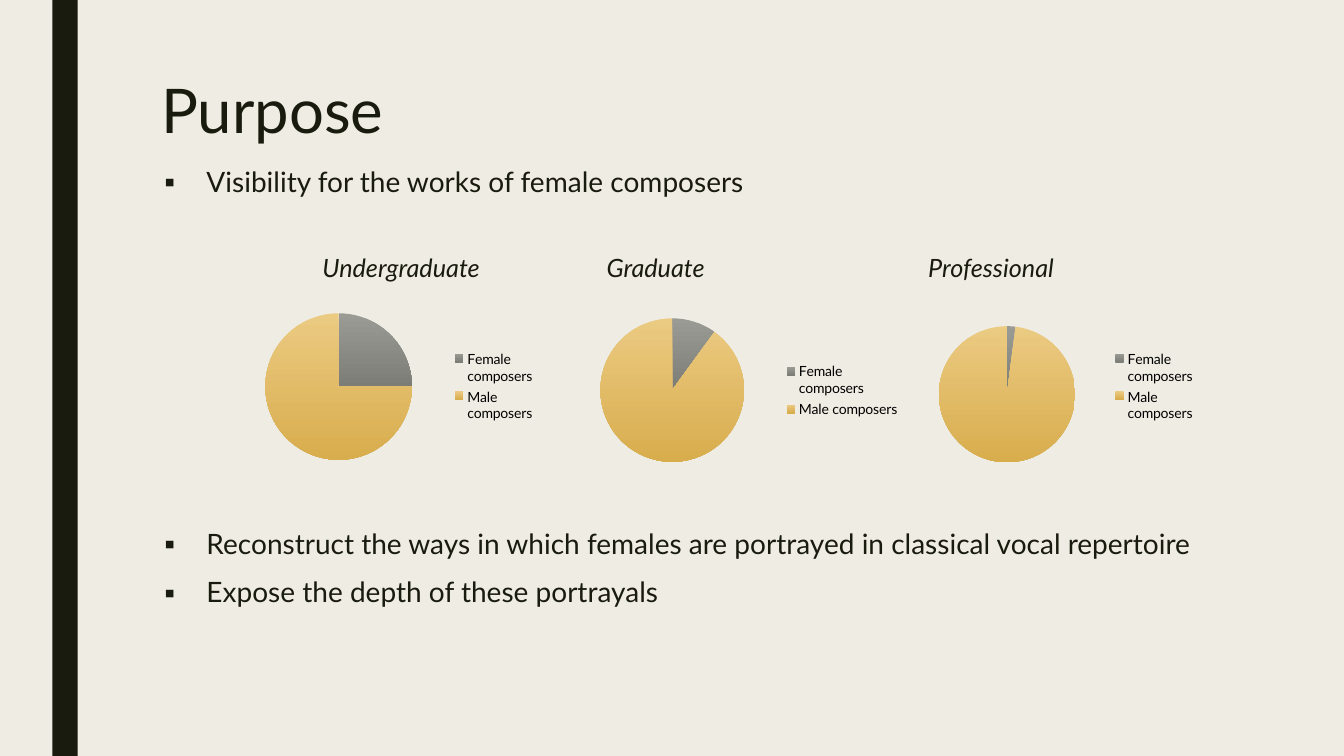
from dataclasses import dataclass

from lxml import etree
from pptx import Presentation
from pptx.chart.data import CategoryChartData
from pptx.dml.color import RGBColor
from pptx.enum.chart import XL_CHART_TYPE, XL_LEGEND_POSITION
from pptx.enum.shapes import MSO_SHAPE
from pptx.oxml import parse_xml
from pptx.oxml.ns import nsdecls, qn
from pptx.util import Inches, Pt

PIE = XL_CHART_TYPE.PIE
RIGHT = XL_LEGEND_POSITION.RIGHT
RECT = MSO_SHAPE.RECTANGLE
COLS, ROWS = 160, 90


@dataclass(frozen=True)
class Theme:
    font: str = "Lato"
    paper: str = "EFEDE3"
    ink: str = "191B0E"
    label: str = "000000"
    slices: tuple = (("9A9B95", "7C7D76"), ("EBCA82", "D8AD4D"))
    title: int = 44
    body: int = 20
    head: int = 18
    legend: int = 10


def color(code):
    return RGBColor.from_string(code)


class Deck:
    def __init__(self, theme):
        self.theme = theme
        self.show = Presentation()
        self.show.slide_width = Inches(13.33)
        self.show.slide_height = Inches(7.5)
        self.slide = self.show.slides.add_slide(self.show.slide_layouts[6])
        back = self.slide.background.fill
        back.solid()
        back.fore_color.rgb = color(theme.paper)

    def place(self, left, top, width, height):
        col = self.show.slide_width / COLS
        row = self.show.slide_height / ROWS
        return [round(n) for n in (left * col, top * row, width * col, height * row)]

    def bar(self, *area):
        shape = self.slide.shapes.add_shape(RECT, *self.place(*area))
        shape.shadow.inherit = False
        shape.fill.solid()
        shape.fill.fore_color.rgb = color(self.theme.ink)
        shape.line.fill.background()

    def text(self, area, lines, size, pitch=0.94, slant=False, dots=False):
        frame = self.slide.shapes.add_textbox(*self.place(*area)).text_frame
        frame.word_wrap = True
        for i, line in enumerate(lines):
            para = frame.add_paragraph() if i else frame.paragraphs[0]
            para.line_spacing = pitch
            para.space_before = Pt(10 if i else 0)
            para.space_after = Pt(2)
            run = para.add_run()
            run.text = line
            run.font.name = self.theme.font
            run.font.size = Pt(size)
            run.font.italic = slant
            run.font.color.rgb = color(self.theme.ink)
            if dots:
                self.dot(para)

    def dot(self, para):
        props = para._p.get_or_add_pPr()
        props.set("marL", str(Inches(0.42)))
        props.set("indent", str(-Inches(0.42)))
        etree.SubElement(props, qn("a:buFont")).set("typeface", self.theme.font)
        etree.SubElement(props, qn("a:buChar")).set("char", "▪")

    def pie(self, area, share, plot=None):
        data = CategoryChartData()
        data.categories = ["Female composers", "Male composers"]
        data.add_series("Series 1", [share, 100 - share])
        chart = self.slide.shapes.add_chart(PIE, *self.place(*area), data).chart
        chart.has_title = False
        chart.font.name = self.theme.font
        chart.font.size = Pt(self.theme.legend)
        chart.font.color.rgb = color(self.theme.label)
        chart.has_legend = True
        chart.legend.position = RIGHT
        chart.legend.include_in_layout = False
        chart.plots[0].vary_by_categories = True
        points = chart.plots[0].series[0].points
        for i, tones in enumerate(self.theme.slices):
            look = points[i].format
            look.fill.gradient()
            look.fill.gradient_angle = 270
            for stop, tone in zip(look.fill.gradient_stops, tones):
                stop.color.rgb = color(tone)
            look.line.fill.background()
        if plot:
            self.frame(chart, plot)

    def frame(self, chart, plot):
        root = chart._chartSpace.chart.plotArea
        for old in root.findall(qn("c:layout")):
            root.remove(old)
        sides = "".join(f'<c:{k} val="{v}"/>' for k, v in zip("xywh", plot))
        root.insert(0, parse_xml(
            f'<c:layout {nsdecls("c")}><c:manualLayout>'
            '<c:layoutTarget val="inner"/><c:xMode val="edge"/><c:yMode val="edge"/>'
            f'{sides}</c:manualLayout></c:layout>'))


def main():
    theme = Theme()
    deck = Deck(theme)
    deck.bar(6.24, 0, 3, ROWS)
    deck.text((18, 9, 126, 13.44), ["Purpose"], theme.title, pitch=0.89)
    deck.text((18.36, 19.32, 126, 6),
              ["Visibility for the works of female composers"], theme.body, dots=True)
    for left, head in ((37.2, "Undergraduate"), (71.04, "Graduate"),
                       (109.32, "Professional")):
        deck.text((left, 29.76, 24, 5), [head], theme.head, slant=True)
    deck.text((18.36, 62.4, 126, 13), [
        "Reconstruct the ways in which females are portrayed in classical vocal repertoire",
        "Expose the depth of these portrayals"], theme.body, dots=True)
    deck.pie((27, 35.64, 37.92, 20.76), 25)
    deck.pie((108.24, 35.76, 35.28, 20.52), 2, plot=(0.1, 0.15, 0.46, 0.79))
    deck.pie((66.96, 36.24, 41.4, 20.4), 10)
    deck.show.save("out.pptx")


if __name__ == "__main__":
    main()
